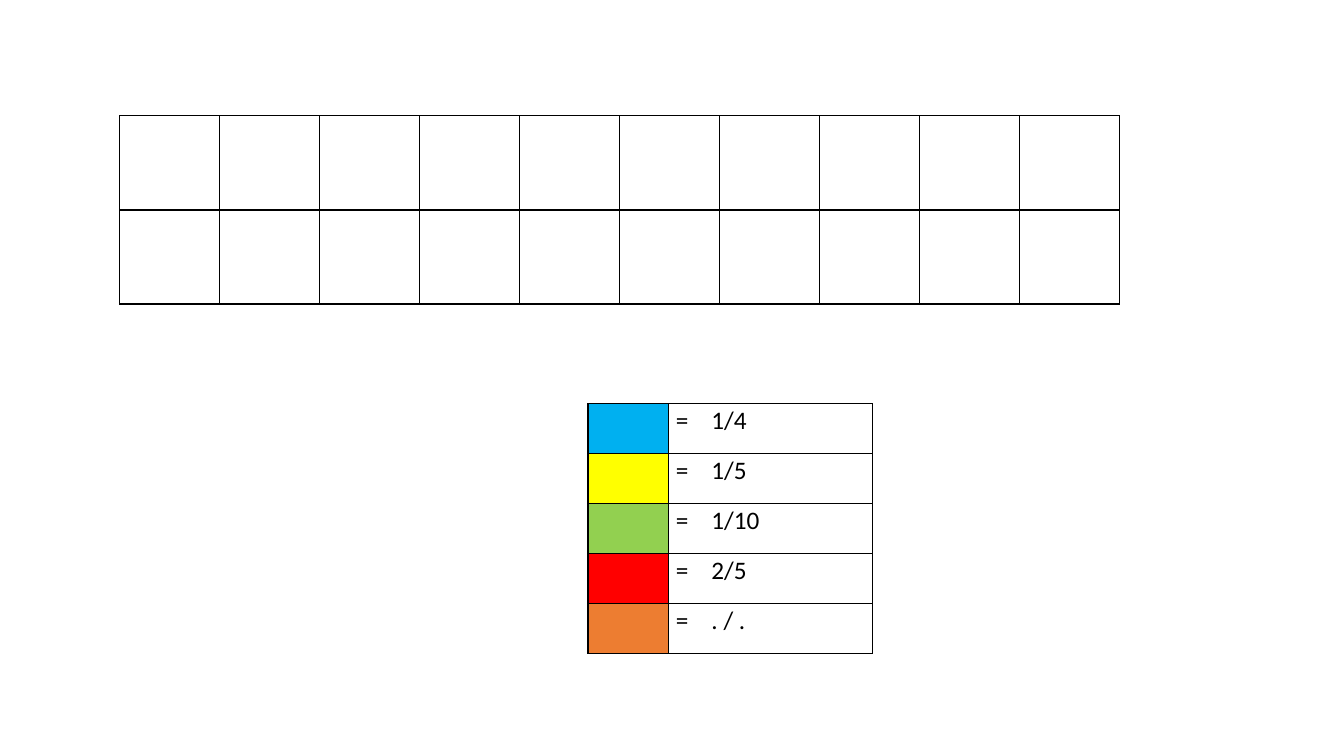
"""Build a fraction-colouring slide with a blank grid and a colour key."""
from dataclasses import dataclass

from lxml.etree import SubElement
from pptx import Presentation
from pptx.dml.color import RGBColor
from pptx.oxml import parse_xml
from pptx.oxml.ns import nsdecls, qn
from pptx.util import Cm, Pt


@dataclass(frozen=True)
class Theme:
    font: str = "Calibri"
    text_size: int = 18
    ink: str = "000000"
    border_width: int = 1
    line_spacing: float = 1.07
    blue: str = "00B0F0"
    yellow: str = "FFFF00"
    green: str = "92D050"
    red: str = "FF0000"
    orange: str = "ED7D31"


class FractionSlide:
    def __init__(self, page, theme):
        self.page = page
        self.theme = theme

    def table(self, left, top, column_widths, row_heights):
        frame = self.page.shapes.add_table(
            len(row_heights), len(column_widths), Cm(left), Cm(top),
            Cm(sum(column_widths)), Cm(sum(row_heights)))
        table = frame.table
        table.first_row = False
        table.horz_banding = False
        for column, width in zip(table.columns, column_widths):
            column.width = Cm(width)
        for row, height in zip(table.rows, row_heights):
            row.height = Cm(height)
        for cell in table.iter_cells():
            cell.fill.background()
            self.border(cell)
        return table

    def border(self, cell):
        properties = cell._tc.get_or_add_tcPr()
        width = Pt(self.theme.border_width)
        for position, side in enumerate(("lnL", "lnR", "lnT", "lnB")):
            properties.insert(position, parse_xml(
                f'<a:{side} {nsdecls("a")} w="{width}"><a:solidFill>'
                f'<a:srgbClr val="{self.theme.ink}"/></a:solidFill></a:{side}>'))

    def swatch(self, cell, color):
        cell.fill.solid()
        cell.fill.fore_color.rgb = RGBColor.from_string(color)

    def label(self, cell, fraction):
        cell.margin_left = cell.margin_right = Cm(0.19)
        cell.margin_top = cell.margin_bottom = 0
        para = cell.text_frame.paragraphs[0]
        para.line_spacing = self.theme.line_spacing
        tabs = SubElement(para._p.get_or_add_pPr(), qn("a:tabLst"))
        SubElement(tabs, qn("a:tab"), pos=str(Cm(0.9)), algn="l")
        span = para.add_run()
        span.text = f"=\t{fraction}"
        span.font.name = self.theme.font
        span.font.size = Pt(self.theme.text_size)
        span.font.color.rgb = RGBColor.from_string(self.theme.ink)


def main():
    deck = Presentation()
    deck.slide_width, deck.slide_height = Cm(33.87), Cm(19.05)
    theme = Theme()
    slide = FractionSlide(deck.slides.add_slide(deck.slide_layouts[6]), theme)

    slide.table(3.02, 2.92, [2.52] * 10, [2.37] * 2)

    color_key = [
        (theme.blue, "1/4"),
        (theme.yellow, "1/5"),
        (theme.green, "1/10"),
        (theme.red, "2/5"),
        (theme.orange, ". / ."),
    ]
    key_table = slide.table(14.82, 10.17, [2.02, 5.14], [1.26] * len(color_key))
    for row, (color, fraction) in enumerate(color_key):
        slide.swatch(key_table.cell(row, 0), color)
        slide.label(key_table.cell(row, 1), fraction)

    deck.save("out.pptx")


if __name__ == "__main__":
    main()
